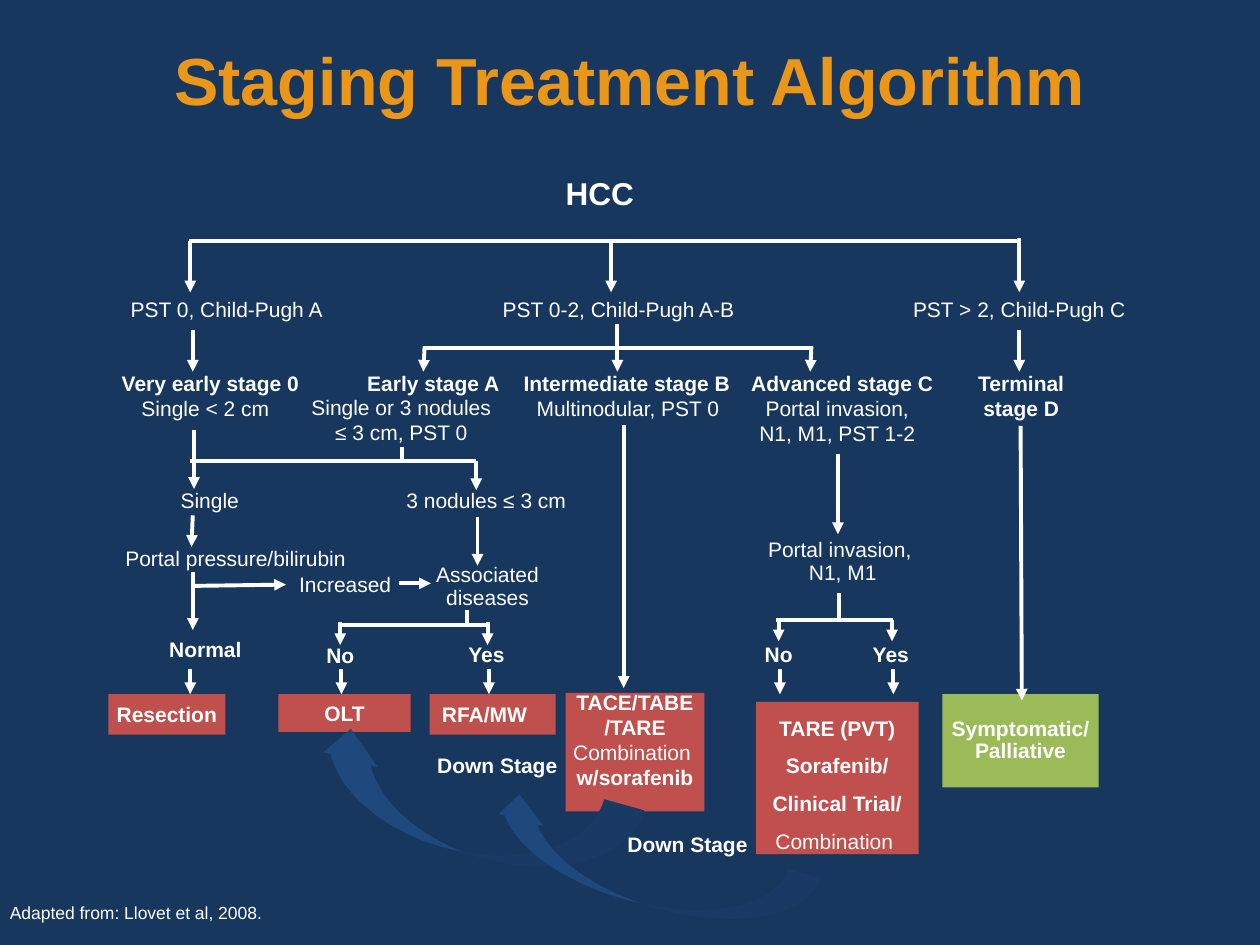
from lxml.etree import SubElement
from pptx import Presentation
from pptx.dml.color import RGBColor
from pptx.enum.shapes import MSO_CONNECTOR as CONNECTOR, MSO_SHAPE as SHAPE
from pptx.enum.text import MSO_ANCHOR as ANCHOR, MSO_AUTO_SIZE as FIT, PP_ALIGN as ALIGN
from pptx.oxml.ns import qn
from pptx.util import Inches, Pt

COLORS = {"background": "17375E", "title": "E99619", "text": "FFFFFF",
          "treatment": "C0504D", "palliative": "9BBB59", "downstage": "1F497D"}

presentation = Presentation()
presentation.slide_width, presentation.slide_height = Inches(10), Inches(7.5)
CELL = presentation.slide_width // 100
slide = presentation.slides.add_slide(presentation.slide_layouts[5])
slide.background.fill.solid()
slide.background.fill.fore_color.rgb = RGBColor.from_string(COLORS["background"])


def cells(*values):
    return [round(value * CELL) for value in values]


def write(shape, text, size=12, color="text", bold=False, plain="", align=ALIGN.CENTER,
          spacing=None, wrap=False, fit=FIT.SHAPE_TO_FIT_TEXT, anchor=ANCHOR.TOP,
          margins=(0, 0, 0, 0)):
    frame = shape.text_frame
    frame.text = text
    frame.word_wrap, frame.auto_size, frame.vertical_anchor = wrap, fit, anchor
    (frame.margin_left, frame.margin_top,
     frame.margin_right, frame.margin_bottom) = cells(*margins)
    for paragraph in frame.paragraphs:
        paragraph.alignment = align
        paragraph.line_spacing = spacing
        for line_break in paragraph._p.findall(qn("a:br")):
            SubElement(line_break, qn("a:rPr"), sz=str(size * 100))
        for run in paragraph.runs:
            run.font.name, run.font.size = "Arial", Pt(size)
            run.font.bold = bold and run.text != plain
            run.font.color.rgb = RGBColor.from_string(COLORS[color])


INSET = (1, 0.5, 1, 0.5)
title = slide.shapes.title
title.left, title.top, title.width, title.height = cells(5, 0, 90, 12.5)
write(title, "Staging Treatment Algorithm", size=38, color="title", bold=True,
      wrap=True, fit=FIT.NONE, anchor=ANCHOR.MIDDLE, margins=INSET)

treatments = [
    ("Resection", 8.6, 55.1, 9.3, 3.2, "treatment", dict(margins=INSET)),
    ("OLT", 22.1, 55.1, 10.5, 3, "treatment", dict(margins=INSET)),
    ("RFA/MW", 34.1, 55.1, 10, 3.2, "treatment", dict(margins=INSET, align=ALIGN.LEFT)),
    ("TACE/TABE\n/TARE\nCombination \nw/sorafenib", 44.9, 55, 11, 9.4, "treatment",
     dict(margins=(1, 0, 1, 2), plain="Combination ")),
    ("TARE (PVT)\nSorafenib/\nClinical Trial/\nCombination ", 60, 55.7, 12.9, 12.1,
     "treatment", dict(spacing=1.5, wrap=True, plain="Combination ")),
    ("Symptomatic/\nPalliative", 74.8, 55.1, 12.4, 7.4, "palliative",
     dict(spacing=0.9, wrap=True)),
]
for text, left, top, width, height, color, options in treatments:
    box = slide.shapes.add_shape(SHAPE.RECTANGLE, *cells(left, top, width, height))
    box.shadow.inherit = False
    box.fill.solid()
    box.fill.fore_color.rgb = RGBColor.from_string(COLORS[color])
    box.line.fill.background()
    write(box, text, bold=True, fit=FIT.NONE, anchor=ANCHOR.MIDDLE, **options)

PST_ROW, STAGE_ROW, DETAIL_ROW, NODULE_ROW, ANSWER_ROW = 23.5, 29.4, 31.4, 38.7, 50.9
STRONG, TIGHT = dict(bold=True), dict(spacing=0.9)
labels = [
    ("HCC", 41.5, 13.3, 12.2, 4, dict(size=18, bold=True, wrap=True, margins=INSET)),
    ("PST 0, Child-Pugh A", 10.3, PST_ROW, 15.4, 2, {}),
    ("PST 0-2, Child-Pugh A-B", 39.8, PST_ROW, 18.6, 2, {}),
    ("PST > 2, Child-Pugh C", 72.4, PST_ROW, 17, 2, {}),
    ("Very early stage 0", 9.5, STAGE_ROW, 14.4, 2, STRONG),
    ("Early stage A", 29.1, STAGE_ROW, 10.6, 2, STRONG),
    ("Intermediate stage B", 41.5, STAGE_ROW, 16.5, 2, STRONG),
    ("Advanced stage C", 59.5, STAGE_ROW, 14.7, 2, STRONG),
    ("Terminal\vstage D", 77.6, STAGE_ROW, 6.9, 4, STRONG),
    ("Single < 2 cm", 11.2, DETAIL_ROW, 10.2, 2, {}),
    ("Single or 3 nodules\v≤ 3 cm, PST 0", 24.7, 31.3, 14.3, 4, {}),
    ("Multinodular, PST 0", 42.5, DETAIL_ROW, 14.7, 2, {}),
    ("Portal invasion,\vN1, M1, PST 1-2", 60, DETAIL_ROW, 12.9, 4, dict(wrap=True)),
    ("Single", 14.3, NODULE_ROW, 4.7, 2, {}),
    ("3 nodules ≤ 3 cm", 32.2, NODULE_ROW, 12.8, 2, {}),
    ("Portal pressure/bilirubin", 9.9, 43.3, 17.6, 2, {}),
    ("Increased", 23.7, 45.4, 7.4, 2, {}),
    ("Associated\vdiseases", 34.5, 44.8, 8.4, 3.7, TIGHT),
    ("Portal invasion,\v N1, M1", 60.9, 42.8, 11.5, 3.6, TIGHT),
    ("Normal", 13.4, 50.5, 5.8, 2, STRONG),
    ("No", 25.4, 51, 3.2, 2, STRONG),
    ("Yes", 37, ANSWER_ROW, 3.2, 2, STRONG),
    ("No", 60.2, ANSWER_ROW, 3.2, 2, STRONG),
    ("Yes", 69.1, ANSWER_ROW, 3.2, 2, STRONG),
    ("Adapted from: Llovet et al, 2008.", -0.2, 71.1, 50, 2.7,
     dict(size=10, align=ALIGN.LEFT, wrap=True, margins=INSET)),
]

bars = [(15, 19.1, 80.9, 19.1), (33.6, 27.6, 64.5, 27.6),
        (15.1, 36.6, 37.8, 36.6), (31.9, 35.5, 31.9, 36.6),
        (26.8, 49.6, 38.8, 49.6), (37.1, 48.4, 37.1, 49.6),
        (61.6, 49.2, 70.9, 49.2), (66.6, 47.1, 66.6, 49.3)]
arrows = [(column, 53.1, column, 55.1) for column in (15.1, 27.1, 38.8, 61.9, 70.9)]
arrows += [(column, 49.4, column, 51.2) for column in (27, 38.7)]
arrows += [(column, 49.2, column, 50.9) for column in (61.8, 70.8)]
arrows += [(column, 19.1, column, 23.2) for column in (15.1, 48.5)]
arrows += [(column, 26.2, column, 29.5) for column in (15.3, 80.9)]
arrows += [(80.9, 18.9, 80.9, 23.2), (49, 25.7, 49, 29.5),
           (33.7, 27.5, 33.6, 29.5), (64.4, 27.5, 64.3, 29.5),
           (15.4, 34.1, 15.4, 38.8), (37.8, 36.6, 37.8, 38.9),
           (15.3, 40.9, 15.2, 43.4), (15.3, 45.4, 15.3, 50),
           (37.9, 41, 37.9, 44.9), (66.5, 36, 66.5, 42.4),
           (15.3, 46.5, 22.7, 46.4), (31.7, 46.3, 34.2, 46.3),
           (49.5, 33.7, 49.5, 54.6), (81, 33.8, 81.1, 55.6)]
for ends in bars + arrows:
    line = slide.shapes.add_connector(CONNECTOR.STRAIGHT, *cells(*ends))
    line.line.width = Pt(2.25)
    line.line.color.rgb = RGBColor.from_string(COLORS["text"])
    if ends in arrows:
        SubElement(line.line._get_or_add_ln(), qn("a:tailEnd"), type="triangle")
    SubElement(line._element.spPr, qn("a:effectLst"))

for left, top, width, height in [(33.9, 51, 7.1, 26.4), (48.6, 55.6, 5.8, 26.6)]:
    curve = slide.shapes.add_shape(SHAPE.CURVED_LEFT_ARROW, *cells(left, top, width, height))
    curve.rotation = 105.5
    for index, value in enumerate((0.463, 0.633, 0.333)):
        curve.adjustments[index] = value
    curve.shadow.inherit = False
    curve.fill.solid()
    curve.fill.fore_color.rgb = RGBColor.from_string(COLORS["downstage"])
    curve.line.fill.background()

labels += [("Down Stage", left, top, 10.8, 2, dict(bold=True, align=ALIGN.LEFT, wrap=True))
           for left, top in ((34.7, 59.7), (49.8, 66))]
for text, left, top, width, height, options in labels:
    label = slide.shapes.add_textbox(*cells(left, top, width, height))
    write(label, text, **options)

presentation.save("out.pptx")
